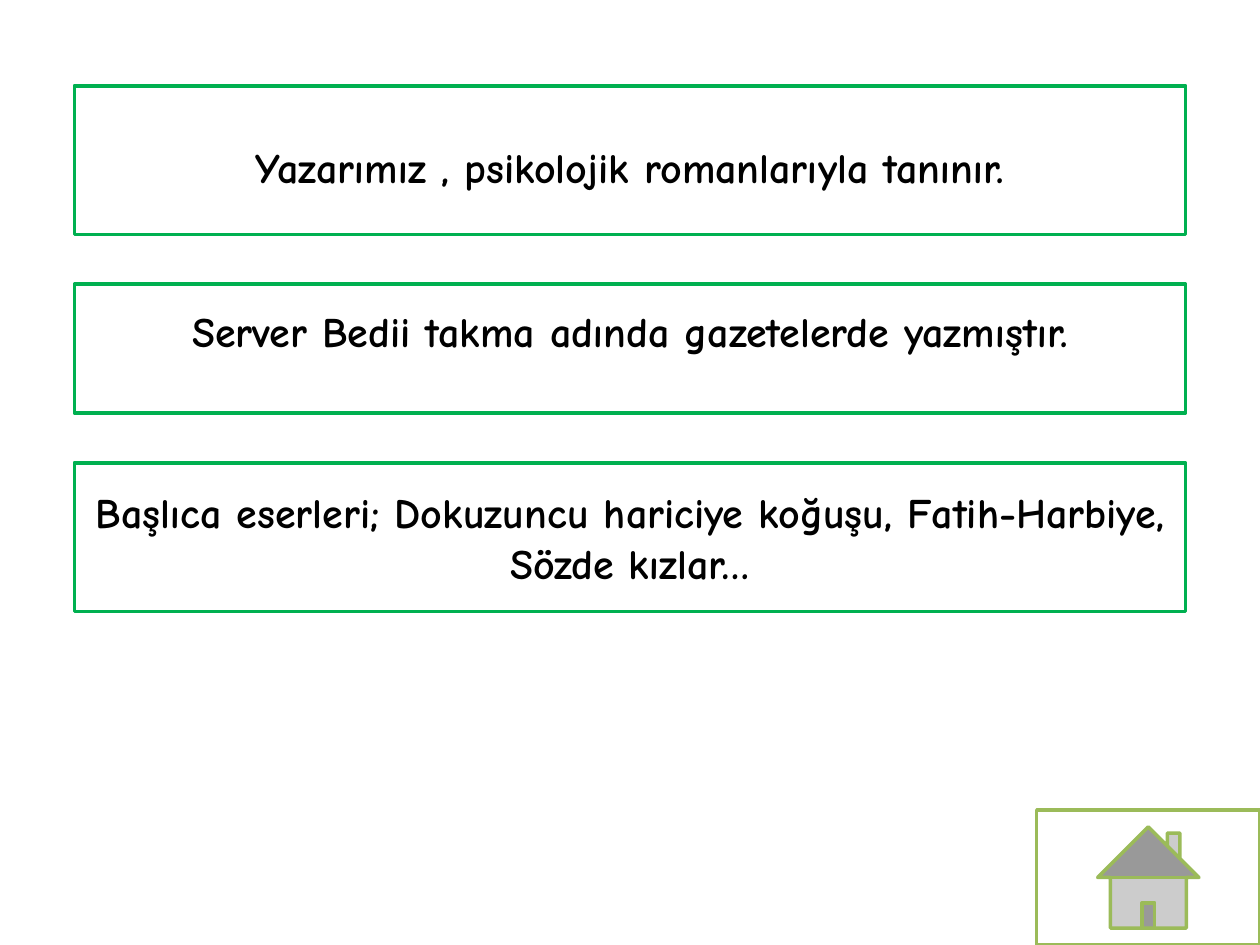
from pptx import Presentation
from pptx.dml.color import RGBColor
from pptx.enum.shapes import MSO_SHAPE as Shape
from pptx.enum.text import MSO_ANCHOR as Anchor, PP_ALIGN as Align
from pptx.util import Cm, Pt

COLORS = {"paper": "FFFFFF", "frame": "00B050", "button": "9BBB59", "text": "000000"}
FONT = {"name": "Comic Neue", "size": Pt(24), "bold": True}
INSET = 0.13
FACTS = [
    ("Yazarımız , psikolojik romanlarıyla tanınır.", 3, {"margin_top": Cm(INSET + 0.25)}),
    ("Server Bedii takma adında gazetelerde yazmıştır.", 2.6, {"margin_bottom": Cm(INSET + 0.72)}),
    ("Başlıca eserleri; Dokuzuncu hariciye koğuşu, Fatih-Harbiye, Sözde kızlar…", 3, {}),
]


def color(name):
    """Return the named colour."""
    return RGBColor.from_string(COLORS[name])


def set_all(target, values):
    """Set every attribute in values on the target."""
    for name, value in values.items():
        setattr(target, name, value)


def add_outlined(page, kind, line, left, top, width, height):
    """Add a white shape with a coloured outline, measured in centimetres."""
    box = page.shapes.add_shape(kind, Cm(left), Cm(top), Cm(width), Cm(height))
    box.shadow.inherit = False
    box.fill.solid()
    box.fill.fore_color.rgb = color("paper")
    box.line.color.rgb = color(line)
    box.line.width = Pt(2)
    return box


def add_fact(page, text, top, height, margins):
    """Add a framed, centred statement."""
    box = add_outlined(page, Shape.RECTANGLE, "frame", 1.5, top, 22.4, height)
    frame = box.text_frame
    set_all(frame, {"word_wrap": True, "vertical_anchor": Anchor.MIDDLE,
                    "margin_top": Cm(INSET), "margin_bottom": Cm(INSET), **margins})
    para = frame.paragraphs[0]
    para.alignment = Align.CENTER
    span = para.add_run()
    span.text = text
    set_all(span.font, FONT)
    span.font.color.rgb = color("text")


def main():
    """Build the slide of author facts with its home button."""
    deck = Presentation()
    set_all(deck, {"slide_width": Cm(25.4), "slide_height": Cm(19.05)})
    page = deck.slides.add_slide(deck.slide_layouts[6])
    top, gap = 1.73, 1
    for text, height, margins in FACTS:
        add_fact(page, text, top, height, margins)
        top += height + gap
    add_outlined(page, Shape.ACTION_BUTTON_HOME, "button", 20.9, 16.33, 4.5, 2.72)
    deck.save("out.pptx")


if __name__ == "__main__":
    main()
